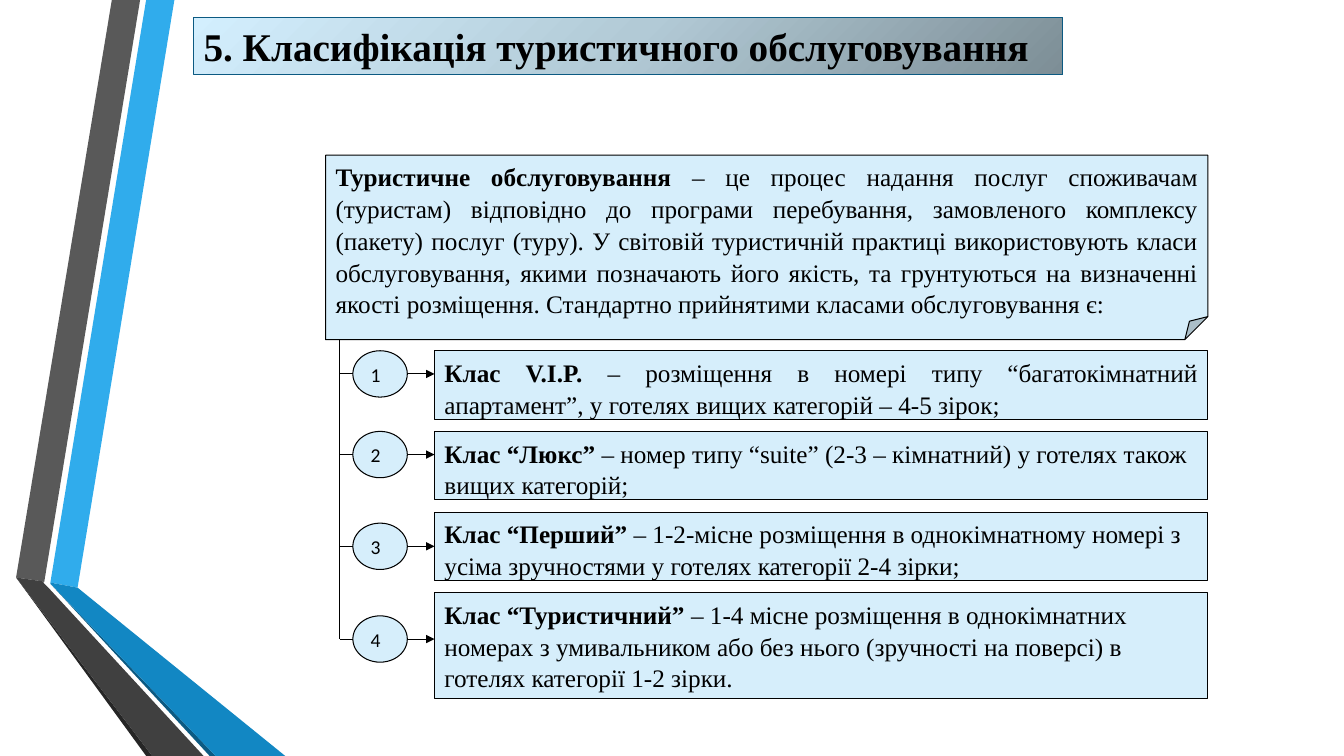
"""Builds the slide on the classes of tourist service."""
from lxml import etree
from pptx import Presentation
from pptx.dml.color import RGBColor
from pptx.enum.shapes import MSO_CONNECTOR, MSO_SHAPE
from pptx.enum.text import MSO_ANCHOR, PP_ALIGN
from pptx.oxml import parse_xml
from pptx.oxml.ns import nsdecls, qn
from pptx.util import Pt

RECT, OVAL, FOLDED = MSO_SHAPE.RECTANGLE, MSO_SHAPE.OVAL, MSO_SHAPE.FOLDED_CORNER
STRAIGHT = MSO_CONNECTOR.STRAIGHT
LEFT, JUSTIFY = PP_ALIGN.LEFT, PP_ALIGN.JUSTIFY
TOP, MIDDLE = MSO_ANCHOR.TOP, MSO_ANCHOR.MIDDLE
PX = 9144
SERIF, SANS = "Times New Roman", "Calibri"
COLORS = {
    "text": "000000", "panel": "D6EEFB", "title_line": "0C5A82",
    "sky": "30ACEC", "gray": "595959", "black": "262626",
    "navy": "0C5A82", "blue": "1287C3", "dark": "404040",
}
TITLE_STOPS = [(0, "7D8E96"), (50, "B2CAD6"), (100, "D3EFFE")]

RIBBONS = [
    ("sky", [(50, 578), (77, 583), (173, 0), (145, 0)]),
    ("gray", [(139, 0), (111, 0), (16, 573), (44, 577)]),
    ("black", [(16, 573), (145, 750), (151, 750)]),
    ("navy", [(50, 579), (208, 750), (214, 750)]),
    ("blue", [(50, 579), (214, 750), (283, 750), (77, 583), (50, 578)]),
    ("dark", [(202, 750), (48, 583), (43, 578), (44, 577), (16, 573), (151, 750)]),
]
TITLE = "5. Класифікація туристичного обслуговування"
INTRO = (
    "Туристичне обслуговування ",
    "– це процес надання послуг споживачам (туристам) відповідно до програми "
    "перебування, замовленого комплексу (пакету) послуг (туру). У світовій "
    "туристичній практиці використовують класи обслуговування, якими позначають "
    "його якість, та грунтуються на визначенні якості розміщення. Стандартно "
    "прийнятими класами обслуговування є:",
)
CLASSES = [
    ("Клас V.I.P.", " – розміщення в номері типу “багатокімнатний апартамент”, "
     "у готелях вищих категорій – 4-5 зірок;", 68, 348, JUSTIFY),
    ("Клас “Люкс”", " – номер типу “suite” (2-3 – кімнатний) у готелях також "
     "вищих категорій;", 68, 428, LEFT),
    ("Клас “Перший”", " – 1-2-місне розміщення в однокімнатному номері з усіма "
     "зручностями у готелях категорії 2-4 зірки;", 68, 519, LEFT),
    ("Клас “Туристичний”", " – 1-4 місне розміщення в однокімнатних номерах з "
     "умивальником або без нього (зручності на поверсі) в готелях категорії "
     "1-2 зірки.", 105, 611, LEFT),
]
INTRO_BOX = (323, 154, 875, 183)
TRUNK_X, OVAL_X, OVAL_W, OVAL_H = 337, 350, 54, 46
BOX_X, BOX_W, FIRST_BOX_Y, BOX_GAP = 431, 767, 348, 12


def rgb(name):
    return RGBColor.from_string(COLORS[name])


def add_ribbon(s, color, points):
    builder = s.shapes.build_freeform(*points[0], scale=PX)
    builder.add_line_segments(points[1:], close=True)
    sp = builder.convert_to_shape()
    sp.shadow.inherit = False
    sp.fill.solid()
    sp.fill.fore_color.rgb = rgb(color)
    sp.line.fill.background()


def add_panel(s, kind, box, runs, size=18, font=SERIF, align=LEFT, anchor=TOP,
              after=0, spacing=1.0, line="text"):
    sp = s.shapes.add_shape(kind, *(v * PX for v in box))
    sp.shadow.inherit = False
    sp.fill.solid()
    sp.fill.fore_color.rgb = rgb("panel")
    sp.line.color.rgb = rgb(line)
    sp.line.width = Pt(0.75)
    tf = sp.text_frame
    tf.word_wrap = True
    tf.vertical_anchor = anchor
    p = tf.paragraphs[0]
    p.alignment = align
    p.space_after = Pt(after)
    p.line_spacing = spacing
    for text, bold in runs:
        r = p.add_run()
        r.text = text
        r.font.name = font
        r.font.size = Pt(size)
        r.font.bold = bold
        r.font.color.rgb = rgb("text")
    return sp


def set_radial_fill(sp, stops):
    marks = "".join(
        f'<a:gs pos="{pos * 1000}"><a:srgbClr val="{color}"/></a:gs>'
        for pos, color in stops)
    grad = parse_xml(
        f'<a:gradFill {nsdecls("a")} rotWithShape="1"><a:gsLst>{marks}</a:gsLst>'
        '<a:path path="circle"><a:fillToRect l="100000" t="100000"/></a:path>'
        '</a:gradFill>')
    props = sp.element.spPr
    props.replace(props.find(qn("a:solidFill")), grad)


def set_fold(sp, share):
    guides = sp.element.spPr.find(qn("a:prstGeom")).find(qn("a:avLst"))
    etree.SubElement(guides, qn("a:gd"), name="adj", fmla=f"val {int(share * 100000)}")


def add_line(s, x1, y1, x2, y2, arrow=False):
    line = s.shapes.add_connector(STRAIGHT, *(v * PX for v in (x1, y1, x2, y2)))
    line.line.color.rgb = rgb("text")
    line.line.width = Pt(0.75)
    props = line.element.spPr
    if arrow:
        etree.SubElement(props.find(qn("a:ln")), qn("a:tailEnd"), type="triangle")
    etree.SubElement(props, qn("a:effectLst"))
    return line


def main():
    prs = Presentation()
    prs.slide_width, prs.slide_height = 1333 * PX, 750 * PX
    s = prs.slides.add_slide(prs.slide_layouts[6])

    for color, points in RIBBONS:
        add_ribbon(s, color, points)
    title = add_panel(s, RECT, (192, 17, 862, 57), [(TITLE, True)], size=28,
                      anchor=MIDDLE, line="title_line")
    set_radial_fill(title, TITLE_STOPS)
    intro = add_panel(s, FOLDED, INTRO_BOX, [(INTRO[0], True), (INTRO[1], False)],
                      align=JUSTIFY, spacing=1.05)
    set_fold(intro, 0.125)

    box_y = FIRST_BOX_Y
    for number, (name, detail, box_h, oval_y, align) in enumerate(CLASSES, 1):
        mid_y = oval_y + OVAL_H // 2
        box = add_panel(s, RECT, (BOX_X, box_y, BOX_W, box_h),
                        [(name, True), (detail, False)], align=align, after=10,
                        spacing=1.05)
        add_panel(s, OVAL, (OVAL_X, oval_y, OVAL_W, OVAL_H), [(str(number), False)],
                  size=14, font=SANS, after=10)
        add_line(s, TRUNK_X, mid_y, OVAL_X, mid_y)
        arrow = add_line(s, OVAL_X + OVAL_W, mid_y, BOX_X, mid_y, arrow=True)
        if mid_y == box_y + box_h // 2:
            arrow.end_connect(box, 1)
        box_y += box_h + BOX_GAP
    add_line(s, TRUNK_X, INTRO_BOX[1] + INTRO_BOX[3], TRUNK_X, mid_y)

    prs.save("out.pptx")


if __name__ == "__main__":
    main()
